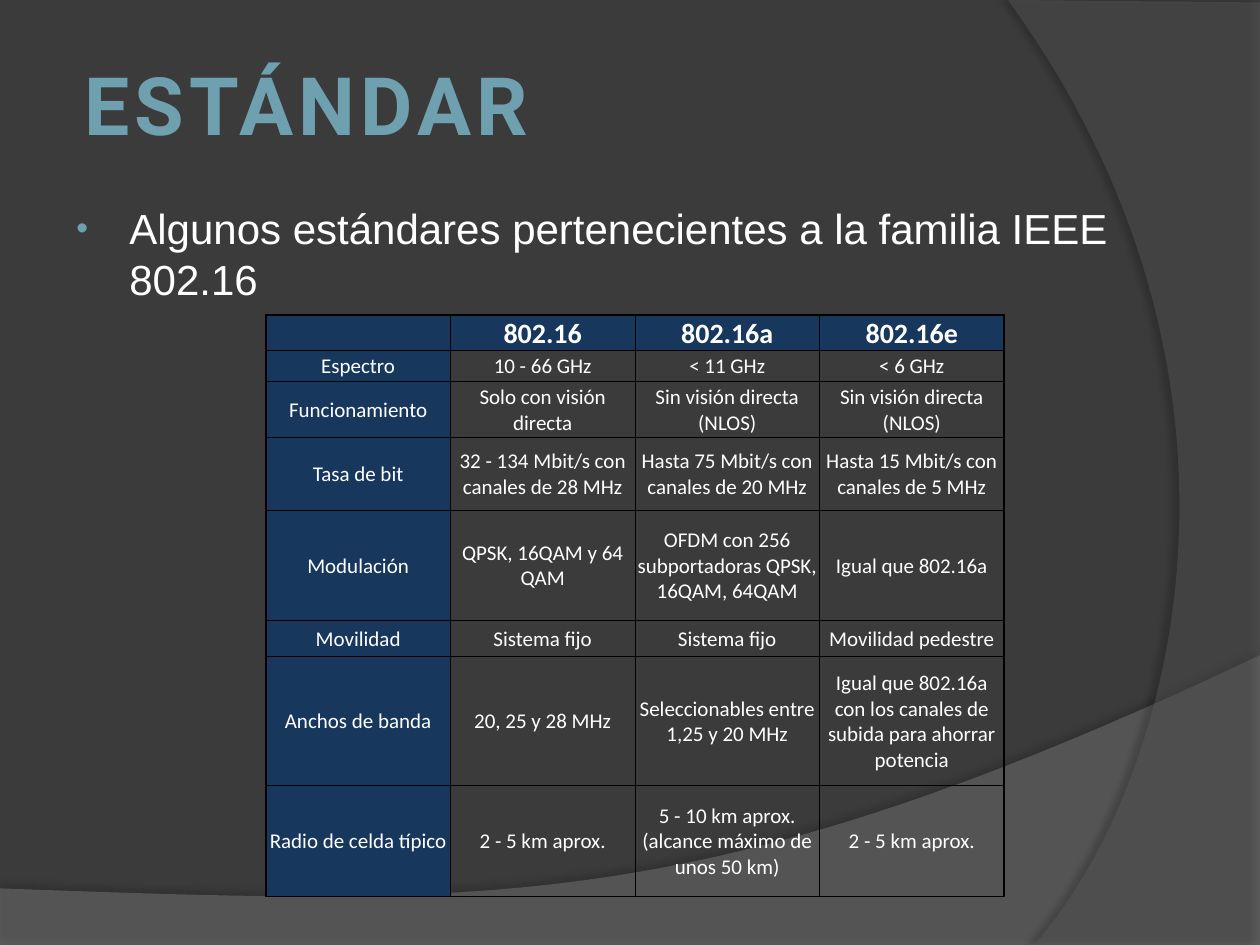
from lxml.etree import SubElement
from pptx import Presentation
from pptx.dml.color import RGBColor
from pptx.enum.text import MSO_ANCHOR, PP_ALIGN
from pptx.oxml.ns import qn
from pptx.util import Cm, Pt

WHITE, TEAL, NAVY, BLACK = "FFFFFF", "6EA0B0", "17375D", "000000"
WIDE, HIGH = 25.4, 19.05

ROWS = [
    ["", "802.16", "802.16a", "802.16e"],
    ["Espectro", "10 - 66 GHz", "< 11 GHz", "< 6 GHz"],
    ["Funcionamiento", "Solo con visión directa", "Sin visión directa (NLOS)",
     "Sin visión directa (NLOS)"],
    ["Tasa de bit", "32 - 134 Mbit/s con canales de 28 MHz",
     "Hasta 75 Mbit/s con canales de 20 MHz",
     "Hasta 15 Mbit/s con canales de 5 MHz"],
    ["Modulación", "QPSK, 16QAM y 64 QAM",
     "OFDM con 256 subportadoras QPSK, 16QAM, 64QAM", "Igual que 802.16a"],
    ["Movilidad", "Sistema fijo", "Sistema fijo", "Movilidad pedestre"],
    ["Anchos de banda", "20, 25 y 28 MHz", "Seleccionables entre 1,25 y 20 MHz",
     "Igual que 802.16a con los canales de subida para ahorrar potencia"],
    ["Radio de celda típico", "2 - 5 km aprox.",
     "5 - 10 km aprox. (alcance máximo de unos 50 km)", "2 - 5 km aprox."],
]
HEIGHTS = [0.7, 0.64, 1.12, 1.47, 2.21, 0.74, 2.59, 2.24]


def color(text):
    return RGBColor.from_string(text)


def add(parent, tag, **attrs):
    node = SubElement(parent, qn(tag))
    for key, value in attrs.items():
        node.set(key, str(value))
    return node


def style(para, name, size, tint, bold=False):
    font = para.font
    font.name, font.size, font.bold = name, Pt(size), bold
    font.color.rgb = color(tint)


def curve(a, b, c, d, steps=60):
    """Points along a cubic Bézier curve."""
    points = []
    for i in range(steps + 1):
        t = i / steps
        u = 1 - t
        points.append(tuple(
            u**3 * p + 3 * u * u * t * q + 3 * u * t * t * r + t**3 * s
            for p, q, r, s in zip(a, b, c, d)))
    return points


def sweep(slide, points, tint, alpha, shade, blur, dist, angle):
    """Translucent background shape with a soft shadow."""
    path = [(Cm(x), Cm(y)) for x, y in points]
    form = slide.shapes.build_freeform(*path[0])
    form.add_line_segments(path[1:], close=True)
    shape = form.convert_to_shape()
    shape.line.fill.background()
    shape.fill.solid()
    shape.fill.fore_color.rgb = color(tint)
    props = shape.element.spPr
    add(props.find(".//" + qn("a:srgbClr")), "a:alpha", val=alpha * 1000)
    shape.shadow.inherit = False
    glow = add(props.find(qn("a:effectLst")), "a:outerShdw", blurRad=Pt(blur),
               dist=Pt(dist), dir=angle * 60000, algn="ctr", rotWithShape=0)
    add(add(glow, "a:srgbClr", val=BLACK), "a:alpha", val=shade * 1000)


def backdrop(slide):
    fill = slide.background.fill
    fill.solid()
    fill.fore_color.rgb = color("3B3B3B")
    wave = curve((WIDE, 13.21), (14.2, 18.52), (9.93, 18.26), (0, 17.91))
    sweep(slide, wave + [(0, HIGH), (WIDE, HIGH)], "7F7F7F", 45, 35, 4, 3.5, 270)
    arc = curve((20.85, HIGH), (23.75, 15.72), (25.86, 7.62), (20.32, 0))
    sweep(slide, arc + [(WIDE, 0.05), (WIDE, HIGH)], "5E5E5E", 40, 45, 4, 4, 180)


def textbox(slide, box, text):
    frame = slide.shapes.add_textbox(*map(Cm, box)).text_frame
    frame.word_wrap = True
    frame.text = text
    return frame, frame.paragraphs[0]


def title(slide, box, text):
    frame, para = textbox(slide, box, text)
    frame.margin_left = frame.margin_right = Cm(0.13)
    style(para, "Roboto", 46, TEAL, True)
    para._p.pPr.find(qn("a:defRPr")).set("spc", "300")


def bullet(slide, box, text):
    _, para = textbox(slide, box, text)
    para.space_before = Pt(4.8)
    props = para._p.get_or_add_pPr()
    props.set("marL", str(Cm(1.17)))
    props.set("indent", str(Cm(-1.07)))
    add(add(props, "a:buClr"), "a:srgbClr", val=TEAL)
    add(props, "a:buSzPct", val=80000)
    add(props, "a:buFont", typeface="Arial")
    add(props, "a:buChar", char="•")
    style(para, "Arial", 24, WHITE)


def border(cell, outer):
    """Thin black edges, thicker on the sides named in outer."""
    props = cell._tc.get_or_add_tcPr()
    for side in "LRTB":
        line = add(props, "a:ln" + side, w=Pt(1 if side in outer else 0.5))
        add(add(line, "a:solidFill"), "a:srgbClr", val=BLACK)


def fill_cell(cell, text, head, filled, outer):
    cell.text = text
    cell.vertical_anchor = MSO_ANCHOR.MIDDLE
    cell.margin_left = cell.margin_right = cell.margin_top = Cm(0.03)
    cell.margin_bottom = 0
    para = cell.text_frame.paragraphs[0]
    para.alignment = PP_ALIGN.CENTER
    style(para, "Calibri", 16 if head else 12, WHITE, head)
    if not text:
        add(para._p, "a:endParaRPr", sz=1200)
    border(cell, outer)
    if filled:
        cell.fill.solid()
        cell.fill.fore_color.rgb = color(NAVY)
    else:
        cell.fill.background()


def grid(slide, left, top, width):
    rows, cols = len(ROWS), len(ROWS[0])
    table = slide.shapes.add_table(rows, cols, Cm(left), Cm(top), Cm(width),
                                   Cm(sum(HEIGHTS))).table
    table.first_row = table.horz_banding = False
    for row, height in zip(table.rows, HEIGHTS):
        row.height = Cm(height)
    for r, texts in enumerate(ROWS):
        for c, text in enumerate(texts):
            edges = {"L": c == 0, "R": c == cols - 1,
                     "T": r == 0, "B": r == rows - 1}
            outer = [side for side, edge in edges.items() if edge]
            fill_cell(table.cell(r, c), text, r == 0, r == 0 or c == 0, outer)


def main():
    deck = Presentation()
    deck.slide_width, deck.slide_height = Cm(WIDE), Cm(HIGH)
    slide = deck.slides.add_slide(deck.slide_layouts[6])
    backdrop(slide)
    bullet(slide, (1.19, 3.96, 22.81, 2.59),
           "Algunos estándares pertenecientes a la familia IEEE 802.16")
    title(slide, (1.57, 0.99, 20.75, 3.18), "ESTÁNDAR")
    grid(slide, 5.36, 6.35, 14.88)
    deck.save("out.pptx")


if __name__ == "__main__":
    main()
